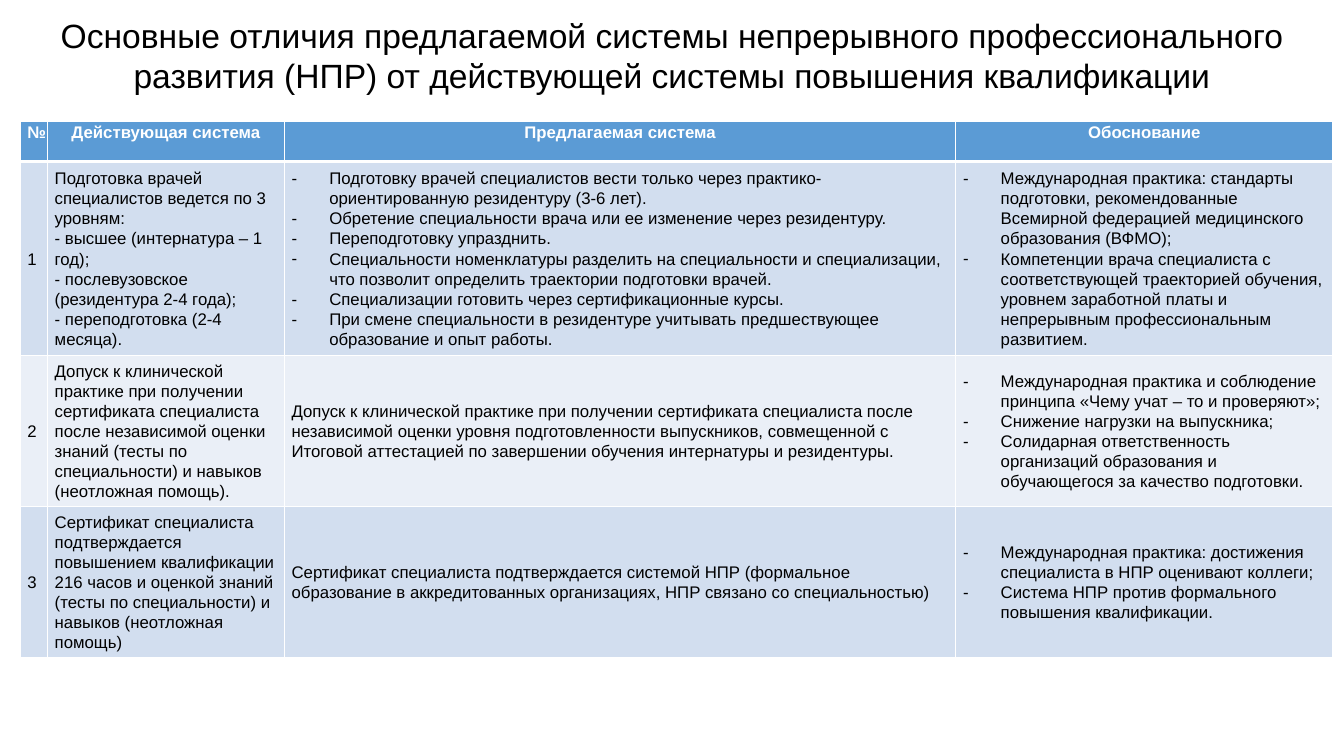
from lxml.etree import SubElement
from pptx import Presentation
from pptx.dml.color import RGBColor
from pptx.enum.text import MSO_ANCHOR, MSO_AUTO_SIZE, PP_ALIGN
from pptx.oxml.ns import qn
from pptx.util import Cm, Pt

FONT = "Arial"
WHITE, BLACK, BLUE = "FFFFFF", "000000", "5B9BD5"
BANDS = ["D2DEEF", "EAEFF7"]
COL_WIDTHS = [0.69, 5.97, 16.92, 9.5]
ROW_HEIGHTS = [1.0, 4.57, 3.56, 3.56]
INDENT = Cm(0.95)

TITLE = ("Основные отличия предлагаемой системы непрерывного профессионального "
         "развития (НПР) от действующей системы повышения квалификации")
HEADERS = ["№", "Действующая система", "Предлагаемая система", "Обоснование"]

# Each cell is a list of paragraphs; several proposals or reasons form a dash list
ROWS = [
    (["1"],
     ["Подготовка врачей специалистов ведется по 3 уровням:",
      "- высшее (интернатура – 1 год);",
      "- послевузовское (резидентура 2-4 года);",
      "- переподготовка (2-4 месяца)."],
     ["Подготовку врачей специалистов вести только через "
      "практико-ориентированную резидентуру (3-6 лет).",
      "Обретение специальности врача или ее изменение через резидентуру.",
      "Переподготовку упразднить.",
      "Специальности номенклатуры разделить на специальности и специализации, "
      "что позволит определить траектории подготовки врачей.",
      "Специализации готовить через сертификационные курсы.",
      "При смене специальности в резидентуре учитывать предшествующее "
      "образование и опыт работы."],
     ["Международная практика: стандарты подготовки, рекомендованные "
      "Всемирной федерацией медицинского образования (ВФМО);",
      "Компетенции врача специалиста с соответствующей траекторией обучения, "
      "уровнем заработной платы и непрерывным профессиональным развитием."]),
    (["2"],
     ["Допуск к клинической практике при получении сертификата специалиста "
      "после независимой оценки знаний (тесты по специальности) и навыков "
      "(неотложная помощь)."],
     ["Допуск к клинической практике при получении сертификата специалиста "
      "после независимой оценки уровня подготовленности выпускников, совмещенной "
      "с Итоговой аттестацией по завершении обучения интернатуры и резидентуры."],
     ["Международная практика и соблюдение принципа «Чему учат – то и проверяют»;",
      "Снижение нагрузки на выпускника;",
      "Солидарная ответственность организаций образования и обучающегося "
      "за качество подготовки."]),
    (["3"],
     ["Сертификат специалиста подтверждается повышением квалификации 216 часов "
      "и оценкой знаний (тесты по специальности) и навыков (неотложная помощь)"],
     ["Сертификат специалиста подтверждается системой НПР (формальное образование "
      "в аккредитованных организациях, НПР связано со специальностью)"],
     ["Международная практика: достижения специалиста в НПР оценивают коллеги;",
      "Система НПР против формального повышения квалификации."]),
]


def rgb(color):
    return RGBColor.from_string(color)


def format_runs(p, size, color, bold=False):
    for r in p.runs:
        r.font.name = FONT
        r.font.size = Pt(size)
        r.font.bold = bold
        r.font.color.rgb = rgb(color)


def add_dash(p):
    pPr = p._p.get_or_add_pPr()
    pPr.set("marL", str(INDENT))
    pPr.set("indent", str(-INDENT))
    SubElement(pPr, qn("a:buFont"), typeface=FONT)
    SubElement(pPr, qn("a:buChar"), char="-")


def add_borders(cell, bottom):
    tcPr = cell._tc.get_or_add_tcPr()
    for side, width in (("L", 1), ("R", 1), ("T", 1), ("B", bottom)):
        ln = SubElement(tcPr, qn(f"a:ln{side}"), w=str(Pt(width)))
        fill = SubElement(ln, qn("a:solidFill"))
        SubElement(fill, qn("a:srgbClr"), val=WHITE)


def fill_cell(cell, paragraphs, fill, header=False, dashes=False):
    cell.margin_left = cell.margin_right = Cm(0.18)
    cell.margin_top = cell.margin_bottom = 0
    cell.vertical_anchor = MSO_ANCHOR.TOP if header else MSO_ANCHOR.MIDDLE
    add_borders(cell, 3 if header else 1)
    cell.fill.solid()
    cell.fill.fore_color.rgb = rgb(fill)
    tf = cell.text_frame
    tf.text = "\n".join(paragraphs)
    for p in tf.paragraphs:
        p.alignment = PP_ALIGN.CENTER if header else PP_ALIGN.LEFT
        p.line_spacing = 1.07
        if dashes:
            add_dash(p)
        format_runs(p, 12, WHITE if header else BLACK, header)


def add_title(s):
    title = s.shapes.title
    title.left, title.top = Cm(0), Cm(0.25)
    title.width, title.height = Cm(33.87), Cm(2.31)
    tf = title.text_frame
    tf.text = TITLE
    tf.word_wrap = True
    tf.auto_size = MSO_AUTO_SIZE.SHAPE_TO_FIT_TEXT
    tf.vertical_anchor = MSO_ANCHOR.TOP
    p = tf.paragraphs[0]
    p.alignment = PP_ALIGN.CENTER
    format_runs(p, 24, BLACK)


def add_comparison(s):
    table = s.shapes.add_table(
        len(ROW_HEIGHTS), len(COL_WIDTHS), Cm(0.51), Cm(3.07),
        Cm(sum(COL_WIDTHS)), Cm(sum(ROW_HEIGHTS))).table
    for column, width in zip(table.columns, COL_WIDTHS):
        column.width = Cm(width)
    for row, height in zip(table.rows, ROW_HEIGHTS):
        row.height = Cm(height)

    # Header row
    for j, header in enumerate(HEADERS):
        fill_cell(table.cell(0, j), [header], BLUE, header=True)

    # Banded body rows
    for i, row in enumerate(ROWS):
        for j, paragraphs in enumerate(row):
            fill_cell(table.cell(i + 1, j), paragraphs, BANDS[i % 2],
                      dashes=j >= 2 and len(paragraphs) > 1)


def main():
    prs = Presentation()
    prs.slide_width, prs.slide_height = Cm(33.87), Cm(19.05)
    s = prs.slides.add_slide(prs.slide_layouts[5])
    add_title(s)
    add_comparison(s)
    prs.save("out.pptx")


if __name__ == "__main__":
    main()
